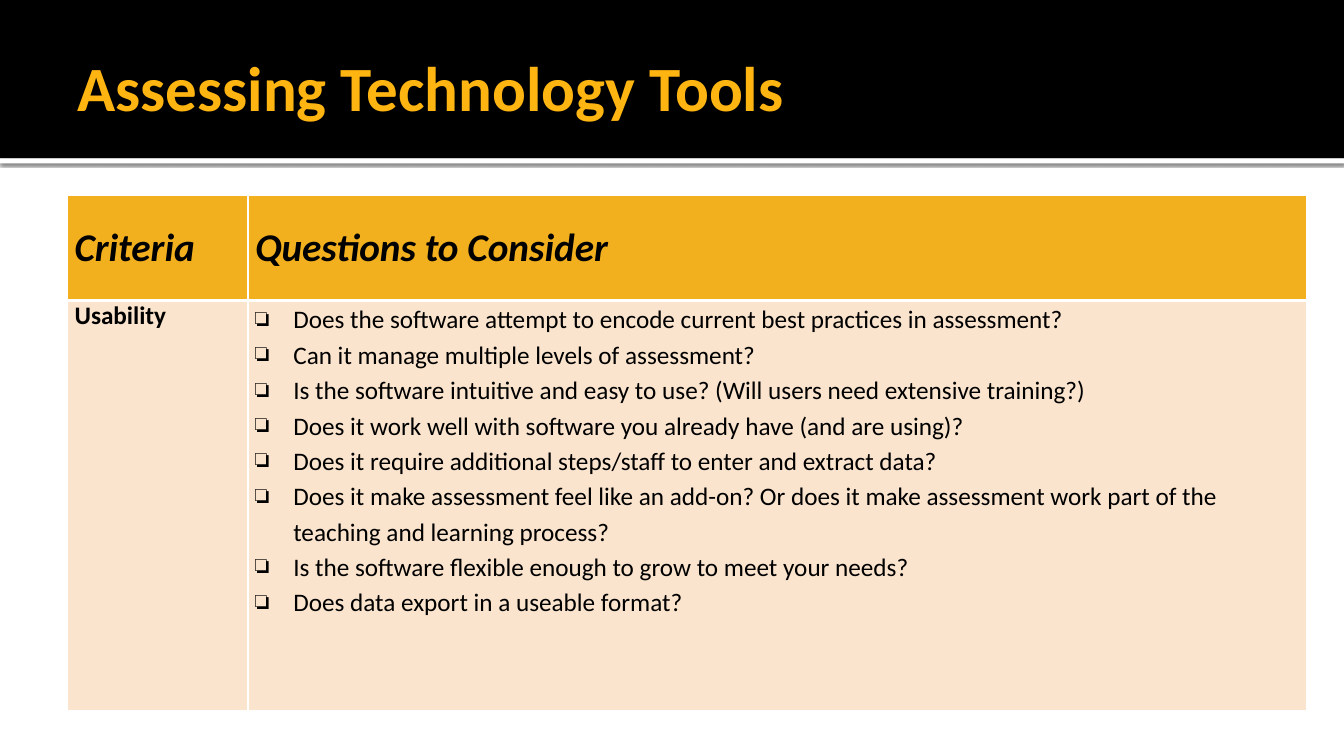
"""Build the slide about assessing technology tools."""

from dataclasses import dataclass

from lxml.etree import SubElement
from pptx import Presentation
from pptx.dml.color import RGBColor
from pptx.enum.shapes import MSO_SHAPE as Preset
from pptx.enum.text import MSO_ANCHOR as Anchor
from pptx.oxml.ns import qn
from pptx.util import Emu, Pt

BLACK = RGBColor(0x00, 0x00, 0x00)
WHITE = RGBColor(0xFF, 0xFF, 0xFF)
TITLE_GOLD = RGBColor(0xFF, 0xB5, 0x11)
HEADER_GOLD = RGBColor(0xF2, 0xB0, 0x1E)
BODY_PEACH = RGBColor(0xFA, 0xE4, 0xCD)
FONT = "Calibri"
EMU_PER_PX = 9144
PAGE_WIDTH, PAGE_HEIGHT = 1333, 750
COLUMNS = (179, 1050)
ROWS = (104, 407)
HANGING = 38

QUESTIONS = (
    "Does the software attempt to encode current best practices in assessment?",
    "Can it manage multiple levels of assessment?",
    "Is the software intuitive and easy to use? (Will users need extensive training?)",
    "Does it work well with software you already have (and are using)?",
    "Does it require additional steps/staff to enter and extract data?",
    "Does it make assessment feel like an add-on? Or does it make assessment work part "
    "of the teaching and learning process?",
    "Is the software flexible enough to grow to meet your needs?",
    "Does data export in a useable format?",
)


@dataclass(frozen=True)
class Band:
    top: int
    height: int
    color: RGBColor
    shadow: bool


@dataclass(frozen=True)
class CellStyle:
    fill: RGBColor
    anchor: Anchor
    top_line: int
    bottom_line: int
    font: dict
    checklist: bool = False


BANDS = (Band(157, 5, WHITE, True), Band(0, 157, BLACK, False))
TITLE_FONT = {"name": FONT, "size": Pt(45), "bold": True}
HEADER_FONT = {"name": FONT, "size": Pt(28), "bold": True, "italic": True}
LABEL_FONT = {"name": FONT, "size": Pt(18), "bold": True}
QUESTION_FONT = {"name": FONT, "size": Pt(18), "bold": False}
HEADER = CellStyle(HEADER_GOLD, Anchor.MIDDLE, 1, 3, HEADER_FONT)
LABEL = CellStyle(BODY_PEACH, Anchor.TOP, 3, 1, LABEL_FONT)
CHECKLIST = CellStyle(BODY_PEACH, Anchor.TOP, 3, 1, QUESTION_FONT, True)
CELLS = (
    ((("Criteria",), HEADER), (("Questions to Consider",), HEADER)),
    ((("Usability",), LABEL), (QUESTIONS, CHECKLIST)),
)


def px(length: int) -> Emu:
    """Turn px into EMU."""
    return Emu(length * EMU_PER_PX)


def set_all(target, values: dict) -> None:
    """Set every attribute named in the values."""
    for name, value in values.items():
        setattr(target, name, value)


def add_span(para, text: str, font: dict, color: RGBColor) -> None:
    """Add formatted text to a paragraph."""
    span = para.add_run()
    span.text = text
    set_all(span.font, font)
    span.font.color.rgb = color


def add_color(parent, color: RGBColor):
    """Add a colour element and return it."""
    return SubElement(parent, qn("a:srgbClr"), val=str(color))


def add_band(page, band: Band) -> None:
    """Draw a full-width band, with a soft shadow if asked."""
    box = page.shapes.add_shape(
        Preset.RECTANGLE, 0, px(band.top), px(PAGE_WIDTH), px(band.height))
    box.fill.solid()
    box.fill.fore_color.rgb = band.color
    box.line.fill.background()
    box.shadow.inherit = False
    if band.shadow:
        effects = box.element.spPr.find(qn("a:effectLst"))
        shadow = SubElement(
            effects, qn("a:outerShdw"), blurRad=str(Pt(2.5)), dist=str(Pt(0.8)),
            dir="5400000", algn="tl", rotWithShape="0")
        SubElement(add_color(shadow, BLACK), qn("a:alpha"), val="60000")


def add_title(page, text: str) -> None:
    """Write the slide title."""
    frame = page.shapes.add_textbox(px(67), px(17), px(1200), px(137)).text_frame
    set_all(frame, {
        "word_wrap": True, "vertical_anchor": Anchor.MIDDLE, "margin_left": px(10),
        "margin_top": px(5), "margin_right": px(5), "margin_bottom": px(5)})
    add_span(frame.paragraphs[0], text, TITLE_FONT, TITLE_GOLD)


def add_checkbox(para) -> None:
    """Give a paragraph a hanging checkbox bullet."""
    para.line_spacing = 1.15
    properties = para._p.get_or_add_pPr()
    properties.set("marL", str(px(HANGING)))
    properties.set("indent", str(-px(HANGING)))
    SubElement(properties, qn("a:buChar"), char="❏")


def fill_cell(cell, texts: tuple[str, ...], style: CellStyle) -> None:
    """Format a table cell and write its paragraphs."""
    set_all(cell, {
        "vertical_anchor": style.anchor, "margin_left": px(7),
        "margin_right": px(7), "margin_top": 0, "margin_bottom": 0})
    properties = cell._tc.get_or_add_tcPr()
    widths = {"lnL": 1, "lnR": 1, "lnT": style.top_line, "lnB": style.bottom_line}
    for side, width in widths.items():
        line = SubElement(properties, qn(f"a:{side}"), w=str(Pt(width)))
        add_color(SubElement(line, qn("a:solidFill")), WHITE)
    cell.fill.solid()
    cell.fill.fore_color.rgb = style.fill
    frame = cell.text_frame
    for index, text in enumerate(texts):
        para = frame.add_paragraph() if index else frame.paragraphs[0]
        if style.checklist:
            add_checkbox(para)
        else:
            set_all(para, {"space_before": Pt(6), "space_after": Pt(6)})
        add_span(para, text, style.font, BLACK)


def add_criteria_table(page) -> None:
    """Draw the table of criteria and questions."""
    table = page.shapes.add_table(
        len(ROWS), len(COLUMNS), px(67), px(194), px(sum(COLUMNS)), px(sum(ROWS))).table
    for column, width in zip(table.columns, COLUMNS):
        column.width = px(width)
    for row, height, contents in zip(table.rows, ROWS, CELLS):
        row.height = px(height)
        for cell, (texts, style) in zip(row.cells, contents):
            fill_cell(cell, texts, style)


def main() -> None:
    """Build and save the deck."""
    deck = Presentation()
    set_all(deck, {"slide_width": px(PAGE_WIDTH), "slide_height": px(PAGE_HEIGHT)})
    page = deck.slides.add_slide(deck.slide_layouts[6])
    for band in BANDS:
        add_band(page, band)
    add_title(page, "Assessing Technology Tools")
    add_criteria_table(page)
    deck.save("out.pptx")


if __name__ == "__main__":
    main()
